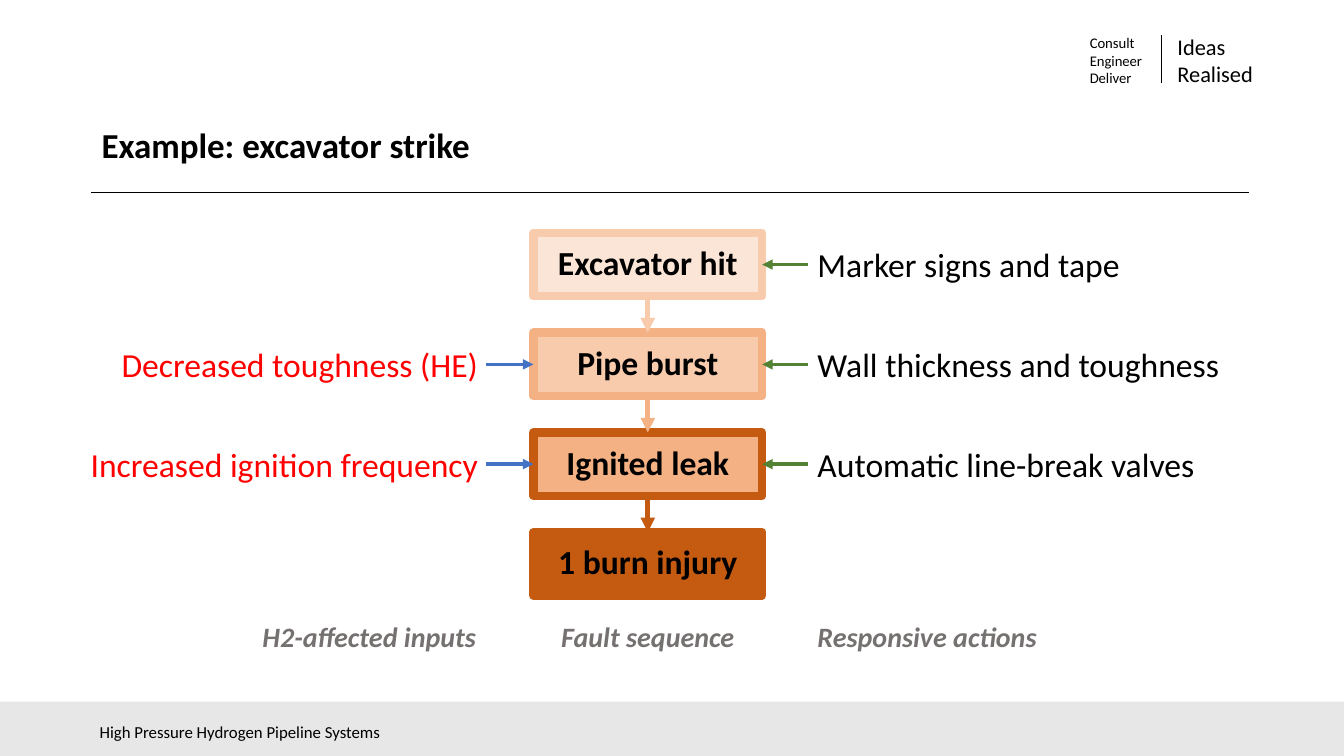
"""Builds the excavator strike slide: a fault sequence with its inputs and responses."""
from dataclasses import dataclass

from lxml.etree import SubElement
from pptx import Presentation
from pptx.dml.color import RGBColor
from pptx.enum.shapes import MSO_CONNECTOR as Connector, MSO_SHAPE as Shape
from pptx.enum.text import MSO_ANCHOR as Anchor, PP_ALIGN as Align
from pptx.oxml.ns import qn
from pptx.util import Inches, Pt


@dataclass(frozen=True)
class Theme:
    font: str = "Calibri"
    black: str = "000000"
    red: str = "FF0000"
    caption: str = "767171"
    footer: str = "E7E7E7"
    input_arrow: str = "4472C4"
    response_arrow: str = "548235"
    severity: tuple = ("FBE5D6", "F8CBAD", "F4B183", "C55A11")
    title_size: float = 25
    body_size: float = 24
    caption_size: float = 20
    motto_size: float = 16
    footer_size: float = 12
    roles_size: float = 10.5


theme = Theme()


def write(shape, text, size, color=theme.black, align=Align.LEFT,
          anchor=Anchor.TOP, bold=False, italic=False):
    frame = shape.text_frame
    frame.text = text
    frame.word_wrap = True
    frame.vertical_anchor = anchor
    for paragraph in frame.paragraphs:
        paragraph.alignment = align
        font = paragraph.runs[0].font
        font.name, font.size = theme.font, Pt(size)
        font.bold, font.italic = bold, italic
        font.color.rgb = RGBColor.from_string(color)


def add_line(start, end, color, width, arrow=False):
    points = [Inches(value) for value in (*start, *end)]
    line = slide.shapes.add_connector(Connector.STRAIGHT, *points)
    line.line.color.rgb = RGBColor.from_string(color)
    line.line.width = Pt(width)
    if arrow:
        SubElement(line.line._get_or_add_ln(), qn("a:tailEnd"), type="triangle")
    SubElement(line._element.spPr, qn("a:effectLst"))
    return line


presentation = Presentation()
presentation.slide_width = Inches(13.33)
presentation.slide_height = Inches(7.5)
slide = presentation.slides.add_slide(presentation.slide_layouts[6])

footer_band = slide.shapes.add_shape(
    Shape.RECTANGLE, Inches(0), Inches(6.96), Inches(13.33), Inches(0.54))
footer_band.shadow.inherit = False
footer_band.fill.solid()
footer_band.fill.fore_color.rgb = RGBColor.from_string(theme.footer)
footer_band.line.fill.background()

add_line((0.9, 1.91), (12.39, 1.91), theme.black, 0.5)
add_line((11.52, 0.35), (11.52, 0.82), theme.black, 0.5)

box_left, box_top, box_width, box_height, pitch = 5.29, 2.31, 2.27, 0.63, 0.99
box_right, box_center = box_left + box_width, box_left + box_width / 2
input_right, response_left = 4.84, 8.01

steps = [
    ("Excavator hit", None, "Marker signs and tape"),
    ("Pipe burst", "Decreased toughness (HE)", "Wall thickness and toughness"),
    ("Ignited leak", "Increased ignition frequency", "Automatic line-break valves"),
    ("1 burn injury", None, None),
]

right, center = {"align": Align.RIGHT}, {"align": Align.CENTER}
middle = {"anchor": Anchor.MIDDLE}
caption = {"color": theme.caption, "bold": True, "italic": True}
labels = [
    ("Ideas\nRealised", 11.58, 0.31, 1.13, 0.57, theme.motto_size, middle),
    ("Consult\nEngineer\nDeliver", 10.71, 0.4, 1.12, 0.4, theme.roles_size, middle),
    ("Example: excavator strike", 0.91, 1.16, 10.27, 0.53, theme.title_size,
     {"bold": True, "anchor": Anchor.BOTTOM}),
    ("H2-affected inputs", 1.75, 6.1, 3.07, 0.44, theme.caption_size, caption | right),
    ("Fault sequence", box_left, 6.1, box_width, 0.44, theme.caption_size, caption | center),
    ("Responsive actions", response_left, 6.1, 2.83, 0.44, theme.caption_size, caption),
    ("High Pressure Hydrogen Pipeline Systems", 0.89, 7.11, 4.04, 0.29,
     theme.footer_size, {}),
]

boxes = []
for row, (step, cause, response) in enumerate(steps):
    top = box_top + row * pitch
    outline = theme.severity[min(row + 1, 3)]
    box = slide.shapes.add_shape(
        Shape.RECTANGLE, Inches(box_left), Inches(top), Inches(box_width), Inches(box_height))
    box.shadow.inherit = False
    box.fill.solid()
    box.fill.fore_color.rgb = RGBColor.from_string(theme.severity[row])
    box.line.color.rgb = RGBColor.from_string(outline)
    box.line.width = Pt(6)
    box.text_frame.margin_bottom = Inches(0.1)
    write(box, step, theme.body_size, align=Align.CENTER, anchor=Anchor.MIDDLE, bold=True)
    boxes.append(box)

    side_y = top + box_height / 2
    if cause:
        labels.append((cause, 0.42, top + 0.06, input_right - 0.42, 0.5,
                       theme.body_size, right | {"color": theme.red}))
        arrow = add_line((input_right - 0.02, side_y), (box_left, side_y),
                         theme.input_arrow, 2.5, arrow=True)
        arrow.end_connect(box, 1)
    if response:
        labels.append((response, response_left, top + 0.06, 4.76, 0.5, theme.body_size, {}))
        arrow = add_line((response_left, side_y), (box_right, side_y),
                         theme.response_arrow, 2.5, arrow=True)
        arrow.end_connect(box, 3)

for row, (upper, lower) in enumerate(zip(boxes, boxes[1:])):
    top = box_top + row * pitch
    arrow = add_line((box_center, top + box_height), (box_center, top + pitch),
                     theme.severity[row + 1], 3.5, arrow=True)
    arrow.begin_connect(upper, 2)
    arrow.end_connect(lower, 0)

for text, left, top, width, height, size, style in labels:
    label = slide.shapes.add_textbox(Inches(left), Inches(top), Inches(width), Inches(height))
    write(label, text, size, **style)

presentation.save("out.pptx")
